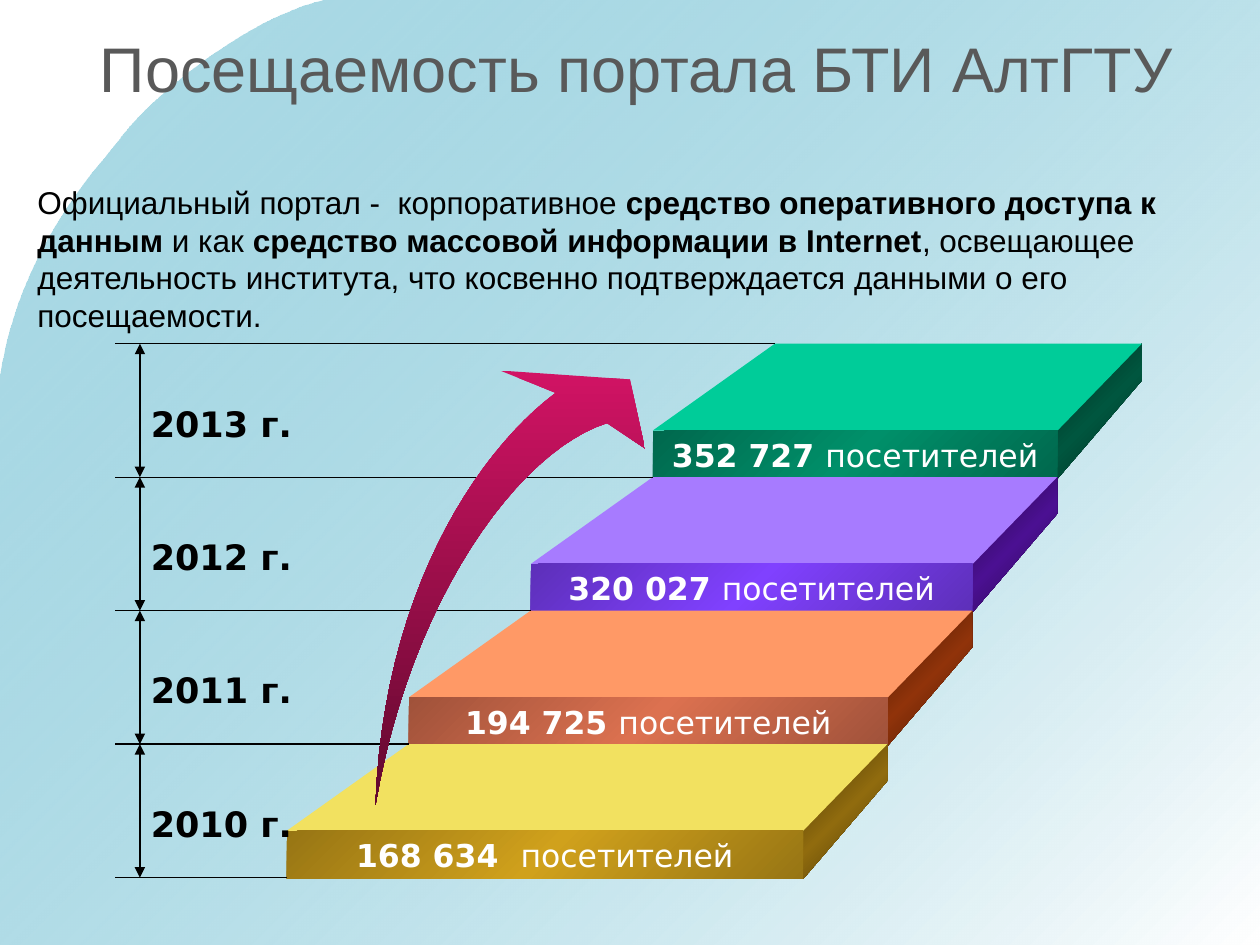
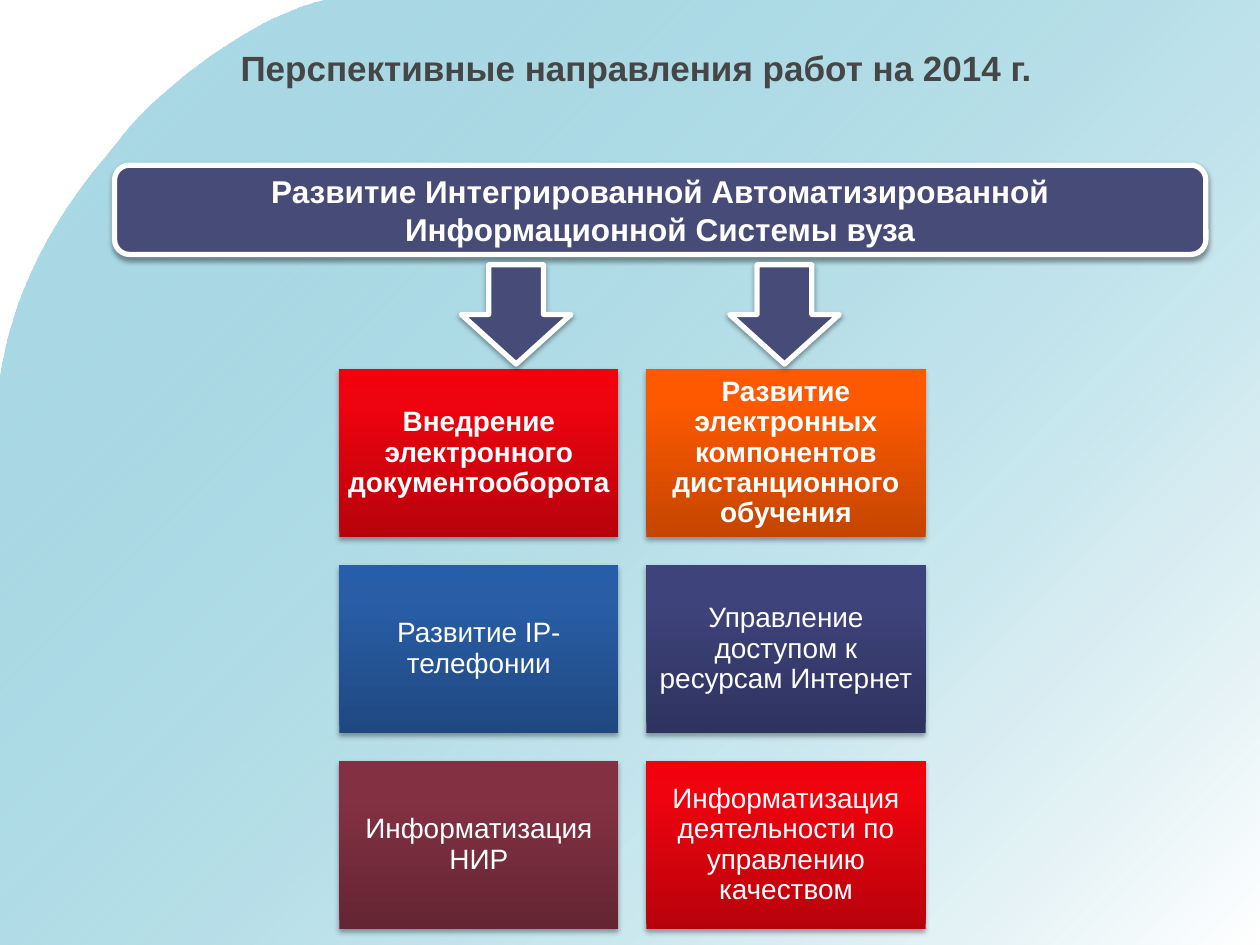
from lxml.etree import SubElement
from pptx import Presentation
from pptx.dml.color import RGBColor
from pptx.enum.shapes import MSO_CONNECTOR, MSO_SHAPE
from pptx.enum.text import MSO_ANCHOR, MSO_AUTO_SIZE, PP_ALIGN
from pptx.oxml.ns import qn
from pptx.util import Cm, Pt

BODY_FONT, STEP_FONT = "Arial", "DejaVu Sans"
BLACK, WHITE, INDIGO = "000000", "FFFFFF", "474B78"
RED = ("B8020B", "EE030E", "F2000C")

# Value, spacing before the noun, roof colour, front edge/middle, side edge/middle
STEPS = [
    ("2013 г.", "352 727 ", "00CC99", ("00684D", "00906A"), ("00281D", "00563F")),
    ("2012 г.", "320 027 ", "A77BFF", ("5D2FB9", "8041FF"), ("230744", "4B1092")),
    ("2011 г.", "194 725 ", "FF9966", ("A0523A", "DC7150"), ("431805", "90330A")),
    ("2010 г.", "168 634  ", "F2E160", ("977514", "D0A11C"), ("433206", "906B0E")),
]

DIRECTIONS = [
    ("Внедрение электронного документооборота", RED),
    ("Развитие электронных компонентов дистанционного обучения",
     ("C44500", "FE5900", "FF5A00")),
    ("Развитие IР-телефонии", ("1F4880", "295EA7", "265EAA")),
    ("Управление доступом к ресурсам Интернет", ("2F335F", "3E437B", "3D427D")),
    ("Информатизация НИР", ("652533", "833142", "852F42")),
    ("Информатизация деятельности по управлению качеством", RED),
]


def rgb(colour):
    return RGBColor.from_string(colour)


def fill_solid(shape, colour):
    shape.shadow.inherit = False
    shape.line.fill.background()
    shape.fill.solid()
    shape.fill.fore_color.rgb = rgb(colour)


def fill_gradient(shape, stops, angle):
    """Fill with (percent, colour, opacity percent) stops, without an outline."""
    shape.shadow.inherit = False
    shape.line.fill.background()
    shape.fill.background()
    properties = shape.element.spPr
    gradient = SubElement(properties, qn("a:gradFill"), rotWithShape="1")
    stop_list = SubElement(gradient, qn("a:gsLst"))
    for percent, colour, opacity in stops:
        stop = SubElement(stop_list, qn("a:gs"), pos=str(percent * 1000))
        tint = SubElement(stop, qn("a:srgbClr"), val=colour)
        if opacity < 100:
            SubElement(tint, qn("a:alpha"), val=str(opacity * 1000))
    SubElement(gradient, qn("a:lin"), ang=str(angle * 60000), scaled="0")
    properties.replace(properties.find(qn("a:noFill")), gradient)


def fill_sheen(shape, edge, middle):
    fill_gradient(shape, [(0, edge, 100), (50, middle, 100), (100, edge, 100)], 45)


def add_shadow(shape, opacity, distance):
    effects = shape.element.spPr.find(qn("a:effectLst"))
    shadow = SubElement(effects, qn("a:outerShdw"), blurRad=str(Pt(3.1)),
                        dist=str(Pt(distance)), dir="5400000", rotWithShape="0")
    colour = SubElement(shadow, qn("a:srgbClr"), val=BLACK)
    SubElement(colour, qn("a:alpha"), val=str(opacity * 1000))


def style(para, size, colour, bold=None, name=BODY_FONT, align=PP_ALIGN.CENTER):
    para.alignment = align
    para.font.name = name
    para.font.size = Pt(size)
    para.font.bold = bold
    para.font.color.rgb = rgb(colour)


def add_spans(para, spans):
    for text, bold in spans:
        span = para.add_run()
        span.text = text
        span.font.bold = bold


def place(shape, left, top, width, height):
    shape.left, shape.top = Cm(left), Cm(top)
    shape.width, shape.height = Cm(width), Cm(height)


def add_preset(page, kind, left, top, width, height):
    return page.shapes.add_shape(kind, Cm(left), Cm(top), Cm(width), Cm(height))


def add_outline(page, points, left=0, top=0):
    corners = [(Cm(left + x), Cm(top + y)) for x, y in points]
    builder = page.shapes.build_freeform(*corners[0], scale=1.0)
    builder.add_line_segments(corners[1:], close=True)
    return builder.convert_to_shape()


def bezier(start, pull, push, end, pieces=24):
    """Points along a cubic curve, both ends included."""
    curve = []
    for step in range(pieces + 1):
        t = step / pieces
        weights = ((1 - t) ** 3, 3 * t * (1 - t) ** 2, 3 * t * t * (1 - t), t ** 3)
        curve.append(tuple(
            sum(w * point[axis] for w, point in zip(weights, (start, pull, push, end)))
            for axis in (0, 1)))
    return curve


def add_line(page, x1, y1, x2, y2, arrows=False):
    line = page.shapes.add_connector(
        MSO_CONNECTOR.STRAIGHT, Cm(x1), Cm(y1), Cm(x2), Cm(y2))
    line.line.color.rgb = rgb(BLACK)
    line.line.width = Pt(0.75)
    if arrows:
        for end in ("a:headEnd", "a:tailEnd"):
            SubElement(line.line._get_or_add_ln(), qn(end), type="triangle")
    SubElement(line.element.spPr, qn("a:effectLst"))


def add_backdrop(deck, page):
    """Draw the curved gradient field and move it behind everything on the master."""
    width, height = deck.slide_width.cm, deck.slide_height.cm
    points = bezier((6.55, 0), (4.83, 0.41), (2.95, 2.11), (2.49, 2.72))
    points += bezier((2.49, 2.72), (2.03, 3.35), (0.41, 4.93), (0, 7.65))[1:]
    points += [(0, height), (width, height), (width, 0)]
    field = add_outline(page, points)
    fill_gradient(field, [(0, "2DA2BF", 39), (100, WHITE, 100)], 45)
    field.element.nvSpPr.cNvPr.id = 20
    deck.slide_master.shapes.element.insert(2, field.element)


def set_title(page, text, size, colour, bold=False):
    title = page.shapes.title
    place(title, 1.4, 0.58, 22.86, 1.57)
    frame = title.text_frame
    frame.auto_size = MSO_AUTO_SIZE.NONE
    frame.vertical_anchor = MSO_ANCHOR.MIDDLE
    frame.text = text
    style(frame.paragraphs[0], size, colour, bold)


def set_intro(page, spans):
    body = page.placeholders[1]
    place(body, 0.5, 3.56, 24.2, 3.38)
    frame = body.text_frame
    frame.auto_size = MSO_AUTO_SIZE.NONE
    para = frame.paragraphs[0]
    para.space_before = Pt(0)
    properties = para._p.get_or_add_pPr()
    properties.set("marL", "0")
    properties.set("indent", "0")
    SubElement(properties, qn("a:buNone"))
    style(para, 18, BLACK, align=PP_ALIGN.LEFT)
    add_spans(para, spans)


def add_step(page, left, right, top, step):
    """One stair: side, roof and labelled front; left and right bound the front."""
    _, visitors, roof_colour, front_colours, side_colours = step
    depth_left, depth_right, roof_height, front_height = 2.46, 1.7, 1.75, 0.97
    back, front_top = right + depth_right, top + roof_height
    side = add_outline(page, [(back, top + 0.74), (right, front_top + front_height),
                              (right, front_top), (back, top)])
    fill_sheen(side, *side_colours)
    roof = add_outline(page, [(right, front_top), (left, front_top),
                              (left + depth_left, top), (back, top)])
    fill_solid(roof, roof_colour)
    front = add_preset(page, MSO_SHAPE.RECTANGLE, left, front_top,
                       right - left, front_height)
    fill_sheen(front, *front_colours)
    frame = front.text_frame
    frame.word_wrap = False
    frame.vertical_anchor = MSO_ANCHOR.MIDDLE
    style(frame.paragraphs[0], 18, WHITE, name=STEP_FONT)
    add_spans(frame.paragraphs[0], [(visitors, True), ("посетителей", False)])


def add_year(page, left, top, text):
    label = page.shapes.add_textbox(Cm(left), Cm(top), Cm(3.43), Cm(1.12))
    label.text_frame.word_wrap = False
    label.text_frame.text = text
    style(label.text_frame.paragraphs[0], 20, BLACK, True, STEP_FONT, PP_ALIGN.LEFT)


def add_growth_arrow(page, left, top):
    tail = (5.26, 9.3)
    points = bezier(tail, (5.41, 5.14), (7.22, 2.26), (8.89, 0.99))
    points += [(7.77, 0.54), (10.39, 0.72), (10.69, 2.11)]
    points += bezier((9.93, 1.6), (8.15, 2.16), (5.97, 5.14), tail)[:-1]
    arrow = add_outline(page, points, left, top)
    fill_gradient(arrow, [(0, "D11364", 100), (100, "61092E", 100)], 90)


def add_staircase(page, left, top):
    rise, shift_left, shift_right = 2.69, 2.46, 1.71
    for index, step in enumerate(STEPS):
        level = top + rise * index
        front_left = left + 10.85 - shift_left * index
        front_right = left + 19.01 - shift_right * index
        add_step(page, front_left, front_right, level, step)
        add_line(page, front_left + shift_left, level, left, level)
        add_line(page, left + 0.51, level, left + 0.51, level + rise, arrows=True)
        add_year(page, left + 0.48, level + 1.05, step[0])
    floor = top + rise * len(STEPS)
    add_line(page, front_left, floor, left, floor)
    add_growth_arrow(page, left, top)


def add_goal(page, left, top, width):
    banner = add_preset(page, MSO_SHAPE.ROUNDED_RECTANGLE, left, top, width, 1.8)
    arrows = [add_preset(page, MSO_SHAPE.DOWN_ARROW, left + offset, top + 2.01, 2.21, 2)
              for offset in (6.99, 12.4)]
    for shape in (banner, *arrows):
        fill_solid(shape, INDIGO)
        shape.line.color.rgb = rgb(WHITE)
        shape.line.width = Pt(3)
        add_shadow(shape, 38, 1.6)
    frame = banner.text_frame
    frame.word_wrap = True
    frame.vertical_anchor = MSO_ANCHOR.MIDDLE
    frame.text = "Развитие Интегрированной Автоматизированной Информационной Системы вуза"
    style(frame.paragraphs[0], 18, WHITE, True)


def add_directions(page, left, top):
    """Two columns of tiles; the first row is bold."""
    width, height, gap, columns = 5.63, 3.39, 0.56, 2
    for index, (text, (dark, main, light)) in enumerate(DIRECTIONS):
        row, column = divmod(index, columns)
        tile = add_preset(page, MSO_SHAPE.RECTANGLE, left + column * (width + gap),
                          top + row * (height + gap), width, height)
        fill_gradient(tile, [(0, dark, 100), (80, main, 100), (100, light, 100)], 270)
        add_shadow(tile, 35, 1.8)
        frame = tile.text_frame
        frame.word_wrap = True
        frame.vertical_anchor = MSO_ANCHOR.MIDDLE
        frame.margin_left = frame.margin_right = Cm(0.15)
        frame.margin_top = frame.margin_bottom = Cm(0.15)
        frame.text = text
        frame.paragraphs[0].line_spacing = 0.9
        style(frame.paragraphs[0], 16, WHITE, row == 0)


def build_attendance(page):
    set_title(page, "Посещаемость портала БТИ АлтГТУ", 36, "595959")
    set_intro(page, [
        ("Официальный портал -  корпоративное ", False),
        ("средство оперативного доступа к данным ", True),
        ("и как ", False),
        ("средство массовой информации в Internet", True),
        (", освещающее деятельность института, что косвенно подтверждается "
         "данными о его посещаемости.", False),
    ])
    add_staircase(page, 2.31, 6.93)


def build_plans(page):
    set_title(page, "Перспективные направления работ на 2014 г.", 20, "464646", True)
    add_directions(page, 6.84, 7.44)
    add_goal(page, 2.31, 3.33, 22)


def main():
    deck = Presentation()
    deck.slide_width, deck.slide_height = Cm(25.4), Cm(19.05)
    attendance = deck.slides.add_slide(deck.slide_layouts.get_by_name("Title and Content"))
    add_backdrop(deck, attendance)
    build_attendance(attendance)
    build_plans(deck.slides.add_slide(deck.slide_layouts.get_by_name("Title Only")))
    deck.save("out.pptx")


if __name__ == "__main__":
    main()
